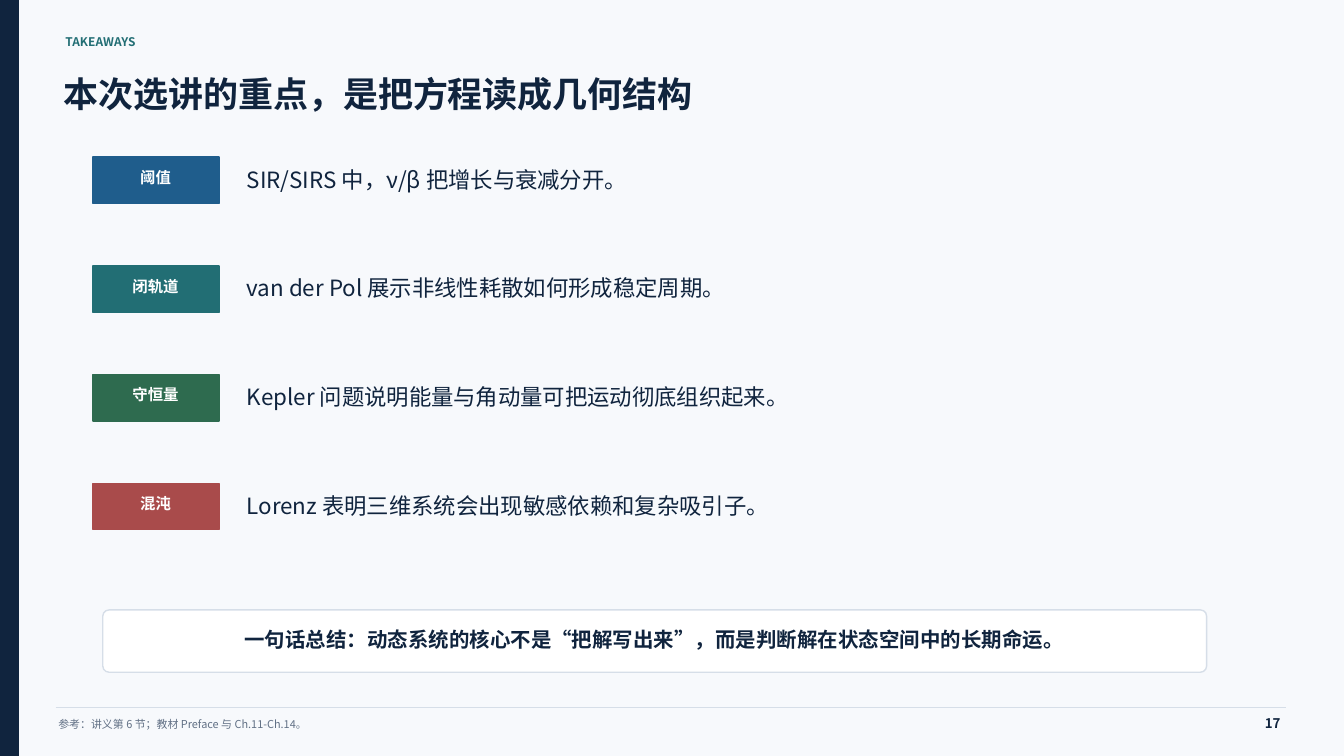
from lxml.etree import SubElement
from pptx import Presentation
from pptx.dml.color import RGBColor
from pptx.enum.shapes import MSO_CONNECTOR as Link, MSO_SHAPE as Kind
from pptx.enum.text import MSO_ANCHOR as Anchor, PP_ALIGN as Align
from pptx.oxml.ns import qn
from pptx.util import Cm, Pt

FONT = "Noto Sans CJK SC"
HUES = {
    "paper": "F7F9FC", "navy": "10243E", "blue": "1F5D8C", "teal": "226E74",
    "green": "2E6B4F", "red": "A94B4B", "white": "FFFFFF", "rule": "D6DEE8",
    "grey": "617085",
}
WIDE, HIGH = 33.86, 19.05

POINTS = [
    ("阈值", "blue", "SIR/SIRS 中，ν/β 把增长与衰减分开。"),
    ("闭轨道", "teal", "van der Pol 展示非线性耗散如何形成稳定周期。"),
    ("守恒量", "green", "Kepler 问题说明能量与角动量可把运动彻底组织起来。"),
    ("混沌", "red", "Lorenz 表明三维系统会出现敏感依赖和复杂吸引子。"),
]
TOP, STEP = 3.96, 2.74

STYLES = {
    "kicker": dict(size=8.5, bold=True, hue="teal", align=Align.LEFT),
    "title": dict(size=25, bold=True, hue="navy", align=Align.LEFT),
    "badge": dict(size=11, bold=True, hue="white", align=Align.CENTER),
    "point": dict(size=16, bold=False, hue="navy", align=Align.LEFT),
    "sum": dict(size=14.6, bold=True, hue="navy", align=Align.CENTER),
    "source": dict(size=7.8, bold=False, hue="grey", align=Align.LEFT),
    "page": dict(size=9.5, bold=True, hue="navy", align=Align.RIGHT),
}

TEXTS = [
    ("kicker", "TAKEAWAYS", (1.65, 0.76, 5.84, 0.61)),
    ("title", "本次选讲的重点，是把方程读成几何结构", (1.6, 1.57, 29.97, 1.57)),
    ("sum", "一句话总结：动态系统的核心不是“把解写出来”，而是判断解在状态空间中的长期命运。",
     (3.25, 15.88, 26.47, 0.46)),
    ("source", "参考：讲义第 6 节；教材 Preface 与 Ch.11-Ch.14。",
     (1.47, 17.98, 26.67, 0.56)),
    ("page", "17", (30.86, 17.91, 1.4, 0.64)),
]


def color(hue):
    return RGBColor.from_string(HUES[hue])


def add_box(slide, area, fill, edge, kind=Kind.RECTANGLE):
    box = slide.shapes.add_shape(kind, *map(Cm, area))
    box.shadow.inherit = False
    box.fill.solid()
    box.fill.fore_color.rgb = color(fill)
    box.line.color.rgb = color(edge)
    box.line.width = Pt(1)
    return box


def add_text(slide, style, text, area):
    look = STYLES[style]
    frame = slide.shapes.add_textbox(*map(Cm, area)).text_frame
    layout = dict(word_wrap=True, vertical_anchor=Anchor.MIDDLE, margin_left=0,
                  margin_right=0, margin_top=0, margin_bottom=0)
    for key, value in layout.items():
        setattr(frame, key, value)
    para = frame.paragraphs[0]
    para.alignment = look["align"]
    run = para.add_run()
    run.text = text
    for key, value in dict(name=FONT, size=Pt(look["size"]), bold=look["bold"]).items():
        setattr(run.font, key, value)
    run.font.color.rgb = color(look["hue"])
    SubElement(run._r.get_or_add_rPr(), qn("a:ea"), typeface=FONT)


def add_rule(slide, left, right, y):
    rule = slide.shapes.add_connector(Link.STRAIGHT, Cm(left), Cm(y), Cm(right), Cm(y))
    rule.line.color.rgb = color("rule")
    rule.line.width = Pt(0.8)
    SubElement(rule._element.spPr, qn("a:effectLst"))


def main():
    deck = Presentation()
    deck.slide_width, deck.slide_height = Cm(WIDE), Cm(HIGH)
    slide = deck.slides.add_slide(deck.slide_layouts[6])
    slide.background.fill.solid()
    slide.background.fill.fore_color.rgb = color("paper")

    add_box(slide, (0, 0, 0.46, HIGH), "navy", "navy")
    for row, (name, hue, text) in enumerate(POINTS):
        y = TOP + row * STEP
        add_box(slide, (2.34, y, 3.18, 1.17), hue, hue)
        add_text(slide, "badge", name, (2.84, y + 0.36, 2.16, 0.3))
        add_text(slide, "point", text, (6.22, y + 0.2, 22.48, 0.71))

    card = add_box(slide, (2.59, 15.37, 27.81, 1.57), "white", "rule",
                   Kind.ROUNDED_RECTANGLE)
    card.adjustments[0] = 0.1
    add_rule(slide, 1.4, 32.39, 17.83)
    for style, text, area in TEXTS:
        add_text(slide, style, text, area)
    deck.save("out.pptx")


if __name__ == "__main__":
    main()
